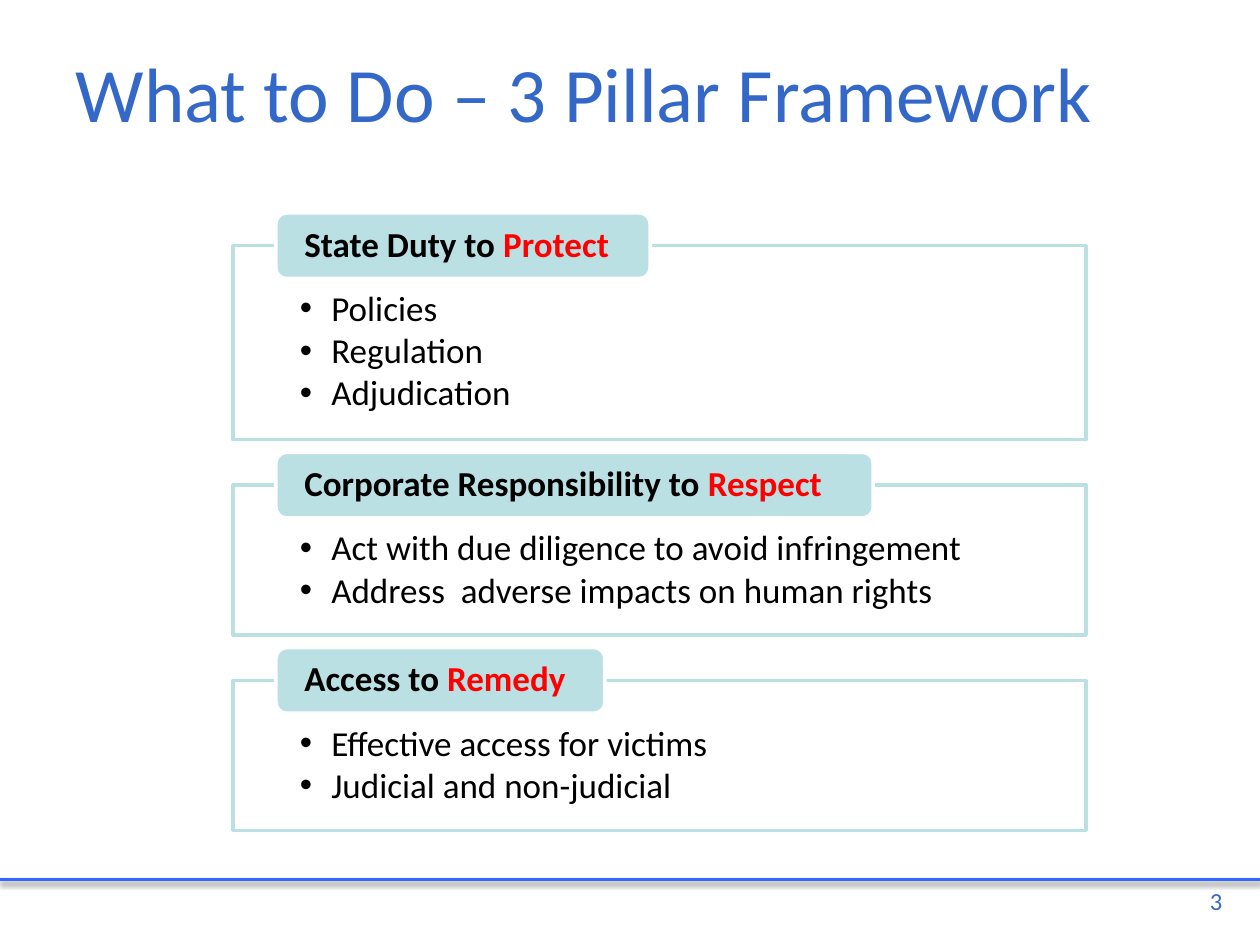
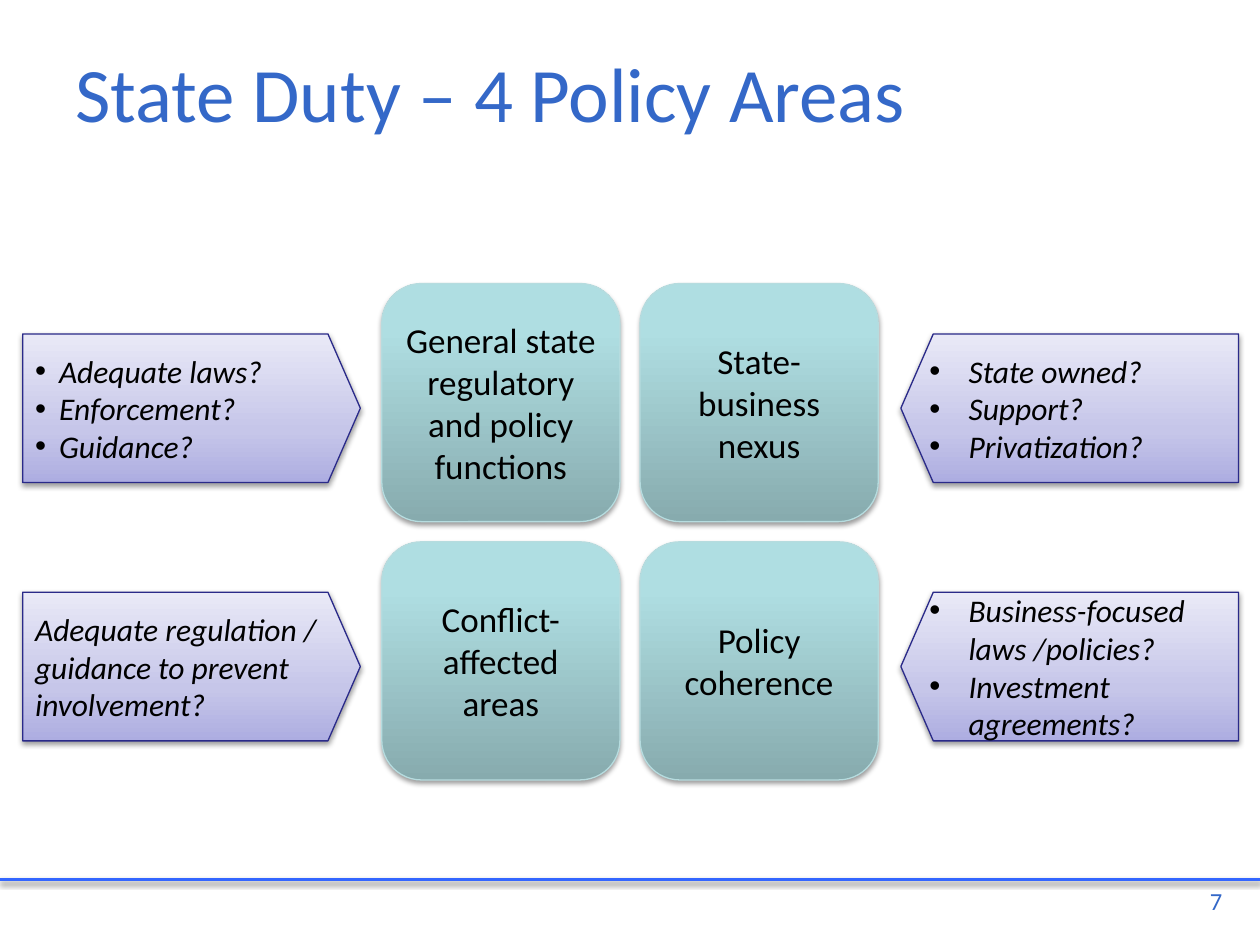
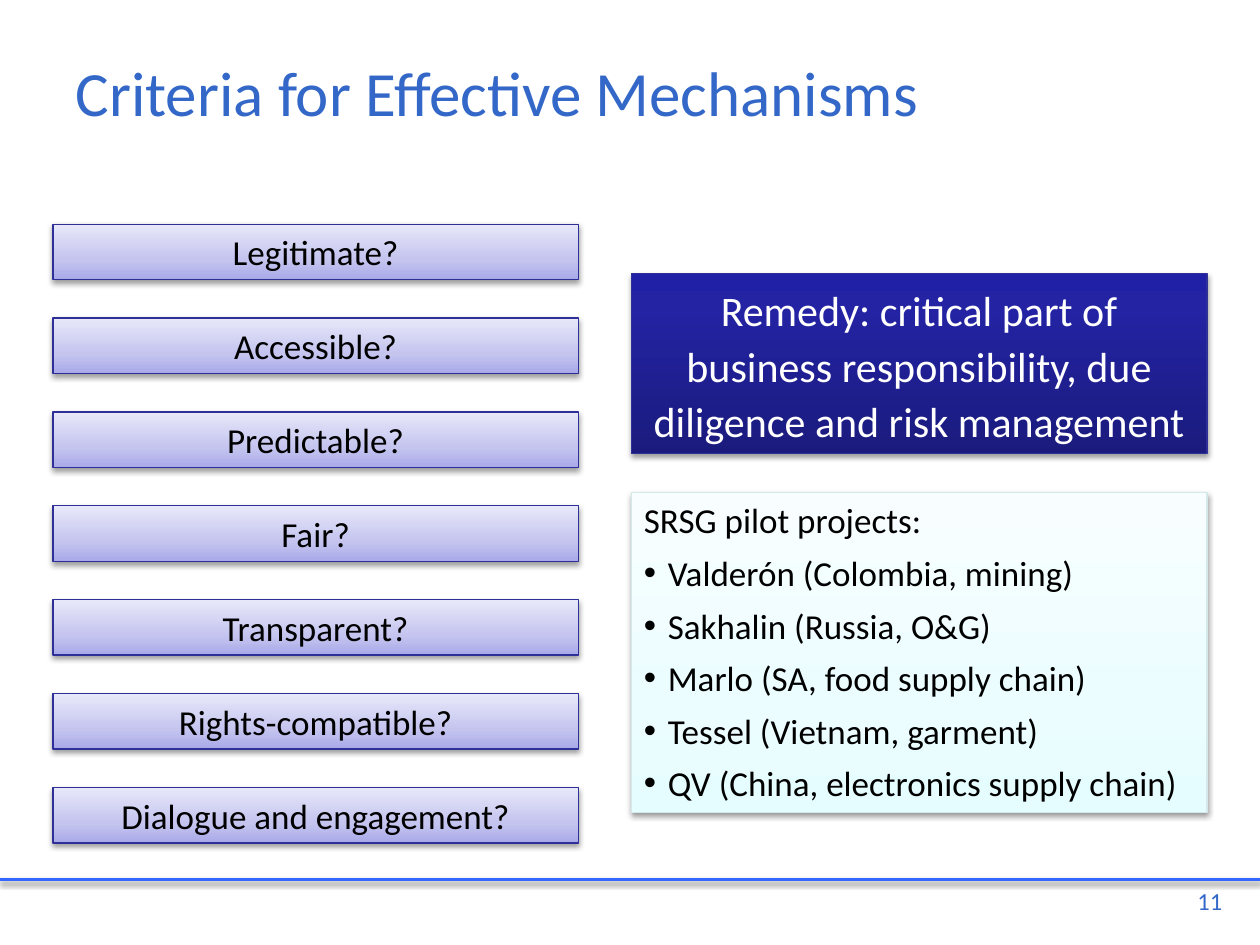
from lxml import etree
from pptx import Presentation
from pptx.dml.color import RGBColor
from pptx.enum import shapes, text
from pptx.oxml.ns import qn
from pptx.util import Inches, Pt


class Theme:
    font = "Calibri"
    title, rule, accent = "3468C8", "3366FF", "FF0000"
    black, white, teal = "000000", "FFFFFF", "BBE0E3"
    # Gradient stops run from the bottom edge up
    tile = [(0, "87ABAE"), (80, "AFDEE2"), (100, "AFE0E4")]
    arrow = [(0, "ADADE1"), (35, "C6C6E9"), (100, "E9E9F7")]
    bar = [(0, "A9A9E9"), (35, "C4C4EF"), (100, "E8E8FA")]
    navy = [(0, "1B1B7E"), (80, "2323A3"), (100, "2020A6")]
    mist = [(0, "E6FDFF"), (35, "ECFDFF"), (100, "F8FEFF")]
    tile_edge, arrow_edge, bar_edge, mist_edge = "B6DCDF", "2A2A89", "2F2F98", "D5E8EA"
    title_size, long_title_size, callout_size = 44, 36, 24
    body_size, note_size, number_size = 20, 18, 14


def paint(sp, fill, line, width=0.75, shadow=True):
    """Fill with a colour or gradient stops, outline, and set the shadow."""
    spPr = sp._element.spPr
    if fill:
        sp.fill.solid()
        if isinstance(fill, str):
            sp.fill.fore_color.rgb = RGBColor.from_string(fill)
        else:
            grad = etree.Element(qn("a:gradFill"), rotWithShape="1")
            stops = etree.SubElement(grad, qn("a:gsLst"))
            for pos, color in fill:
                gs = etree.SubElement(stops, qn("a:gs"), pos=str(pos * 1000))
                etree.SubElement(gs, qn("a:srgbClr"), val=color)
            etree.SubElement(grad, qn("a:lin"), ang="16200000", scaled="0")
            spPr.replace(spPr.find(qn("a:solidFill")), grad)
    sp.line.color.rgb = RGBColor.from_string(line)
    sp.line.width = Pt(width)
    effects = etree.SubElement(spPr, qn("a:effectLst"))
    if shadow:
        outer = etree.SubElement(effects, qn("a:outerShdw"), blurRad=str(Pt(3.1)),
                                 dist=str(Pt(1.6)), dir="5400000", rotWithShape="0")
        color = etree.SubElement(outer, qn("a:srgbClr"), val=Theme.black)
        etree.SubElement(color, qn("a:alpha"), val="38000")


def write(sp, lines, size=Theme.body_size, color=Theme.black, align="LEFT", anchor="MIDDLE",
          bullet=0, spacing=1.0, before=0, after=0, bold=False, italic=False):
    """Write one paragraph per line; bullet is the hanging indent in inches."""
    tf = sp.text_frame
    tf.word_wrap = True
    tf.auto_size = text.MSO_AUTO_SIZE.NONE
    tf.vertical_anchor = text.MSO_ANCHOR[anchor]
    tf.text = "\n".join(lines)
    for i, p in enumerate(tf.paragraphs):
        p.alignment = text.PP_ALIGN[align]
        p.line_spacing = spacing
        p.space_before = Pt(before if i else 0)
        p.space_after = Pt(after)
        pPr = p._p.get_or_add_pPr()
        hang = 0 if lines[i].endswith(":") else Inches(bullet)
        pPr.set("marL", str(hang))
        pPr.set("indent", str(-hang))
        if hang:
            etree.SubElement(pPr, qn("a:buFont"), typeface="Arial")
            etree.SubElement(pPr, qn("a:buChar"), char="•")
        else:
            etree.SubElement(pPr, qn("a:buNone"))
        for r in p.runs:
            r.font.name, r.font.size = Theme.font, Pt(size)
            r.font.bold, r.font.italic = bold, italic
            r.font.color.rgb = RGBColor.from_string(color)


prs = Presentation()
prs.slide_width, prs.slide_height = Inches(10), Inches(7.5)
shape = shapes.MSO_SHAPE

# Shared frame: title, footer rule, slide number
slides = []
for title, number, size, layout in [
    ("What to Do – 3 Pillar Framework", "3", Theme.title_size, 5),
    ("State Duty – 4 Policy Areas", "7", Theme.title_size, 5),
    ("Criteria for Effective Mechanisms", "11", Theme.long_title_size, 1),
]:
    s = prs.slides.add_slide(prs.slide_layouts[layout])
    sp = s.shapes.title
    sp.left, sp.top, sp.width, sp.height = Inches(0.5), Inches(0.3), Inches(9), Inches(0.85)
    write(sp, [title], size, Theme.title)
    rule = s.shapes.add_connector(shapes.MSO_CONNECTOR.STRAIGHT, 0, Inches(6.98),
                                  Inches(10), Inches(6.98))
    paint(rule, None, Theme.rule, 2)
    sp = s.shapes.add_textbox(Inches(7.47), Inches(6.98), Inches(2.33), Inches(0.52))
    write(sp, [number], Theme.number_size, Theme.title, "RIGHT", "TOP")
    slides.append(s)
pillar_slide, policy_slide, criteria_slide = slides

# Three pillars: outlined list with a tag over its top edge
top = 1.95
for lead, key, tag_width, items in [
    ("State Duty to ", "Protect", 2.97, ["Policies", "Regulation", "Adjudication"]),
    ("Corporate Responsibility to ", "Respect", 4.74,
     ["Act with due diligence to avoid infringement",
      "Address  adverse impacts on human rights"]),
    ("Access to ", "Remedy", 2.61, ["Effective access for victims", "Judicial and non-judicial"]),
]:
    height = 0.49 + 0.35 * len(items)
    box = pillar_slide.shapes.add_shape(shape.RECTANGLE, Inches(1.85), Inches(top),
                                        Inches(6.77), Inches(height))
    paint(box, Theme.white, Theme.teal, 2, shadow=False)
    write(box, items, anchor="TOP", bullet=0.25, spacing=0.9, after=2.6)
    tf = box.text_frame
    tf.margin_left = tf.margin_right = Inches(0.53)
    tf.margin_top, tf.margin_bottom = Inches(0.36), Inches(0.16)

    tag = pillar_slide.shapes.add_shape(shape.ROUNDED_RECTANGLE, Inches(2.19),
                                        Inches(top - 0.26), Inches(tag_width), Inches(0.52))
    paint(tag, Theme.teal, Theme.white, 2, shadow=False)
    write(tag, [lead], spacing=0.9, bold=True)
    tf = tag.text_frame
    tf.margin_left, tf.margin_right = Inches(0.2), Inches(0.1)
    tf.margin_top = tf.margin_bottom = 0
    r = tf.paragraphs[0].add_run()
    r.text = key
    r.font.name, r.font.size, r.font.bold = Theme.font, Pt(Theme.body_size), True
    r.font.color.rgb = RGBColor.from_string(Theme.accent)
    top += height + 0.36

# Four policy tiles, each with an arrow of questions beside it
policy_areas = [
    ("General state regulatory and policy functions", 0.19,
     ["Adequate laws?", "Enforcement?", "Guidance?"]),
    ("State-business nexus", 0.31, ["State owned?", "Support?", "Privatization?"]),
    ("Conflict-affected areas", 0, ["Adequate regulation / guidance to prevent involvement?"]),
    ("Policy coherence", 0.31, ["Business-focused laws /policies?", "Investment agreements?"]),
]
for i, (area, hang, questions) in enumerate(policy_areas):
    row, col = divmod(i, 2)
    top = 2.25 + 2.05 * row
    tile = policy_slide.shapes.add_shape(shape.ROUNDED_RECTANGLE, Inches(3.03 + 2.05 * col),
                                         Inches(top), Inches(1.89), Inches(1.89))
    paint(tile, Theme.tile, Theme.tile_edge)
    write(tile, [area], align="CENTER")
    arrow = policy_slide.shapes.add_shape(shape.PENTAGON, Inches((0.18, 7.15)[col]),
                                          Inches(top + 0.4), Inches(2.68), Inches(1.18))
    arrow.adjustments[0] = 0.218
    if col:
        arrow._element.spPr.find(qn("a:xfrm")).set("flipH", "1")
    paint(arrow, Theme.arrow, Theme.arrow_edge)
    write(arrow, questions, Theme.note_size, bullet=hang, italic=True)

# Seven criteria bars
criteria = ["Legitimate?", "Accessible?", "Predictable?", "Fair?", "Transparent?",
            "Rights-compatible?", "Dialogue and engagement?"]
for i, criterion in enumerate(criteria):
    bar = criteria_slide.shapes.add_shape(shape.RECTANGLE, Inches(0.42),
                                          Inches(1.78 + 0.745 * i), Inches(4.17), Inches(0.44))
    paint(bar, Theme.bar, Theme.bar_edge)
    write(bar, [criterion], align="CENTER")

# Pilot projects and the remedy callout
pilots = criteria_slide.placeholders[1]
pilots.left, pilots.top = Inches(5.01), Inches(3.91)
pilots.width, pilots.height = Inches(4.57), Inches(2.54)
paint(pilots, Theme.mist, Theme.mist_edge)
write(pilots, ["SRSG pilot projects:", "Valderón (Colombia, mining)", "Sakhalin (Russia, O&G)",
               "Marlo (SA, food supply chain)", "Tessel (Vietnam, garment)",
               "QV (China, electronics supply chain)"],
      anchor="TOP", bullet=0.19, before=6)

callout = criteria_slide.shapes.add_shape(shape.RECTANGLE, Inches(5.01), Inches(2.17),
                                          Inches(4.57), Inches(1.43))
paint(callout, Theme.navy, Theme.bar_edge)
write(callout, ["Remedy: critical part of business responsibility, due diligence "
                "and risk management"],
      Theme.callout_size, Theme.white, "CENTER", "TOP", spacing=1.1)

prs.save("out.pptx")
